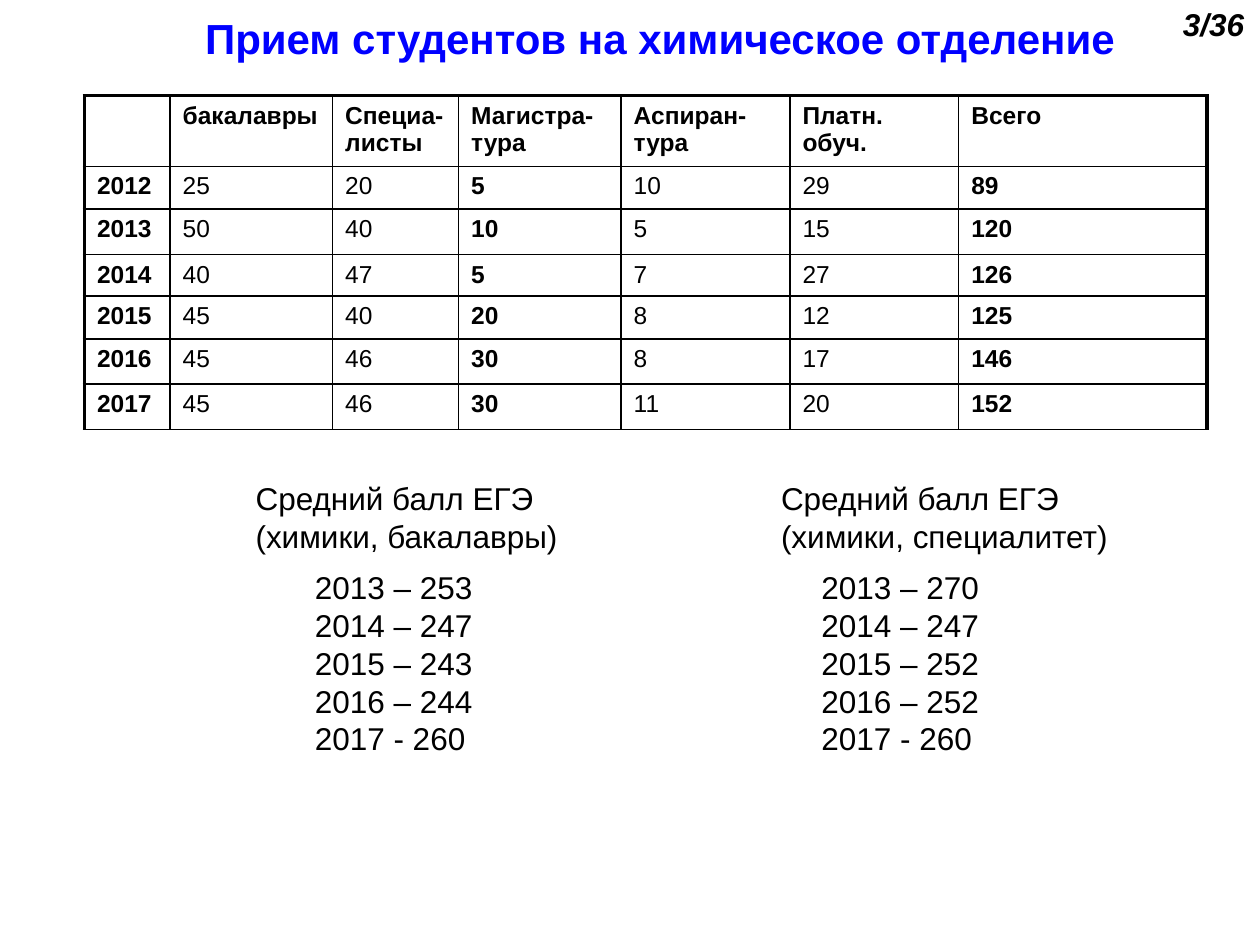
from typing import NamedTuple

from lxml.etree import SubElement
from pptx import Presentation
from pptx.dml.color import RGBColor
from pptx.enum.text import MSO_AUTO_SIZE as AutoSize
from pptx.oxml.ns import qn
from pptx.slide import Slide
from pptx.table import _Cell as Cell
from pptx.text.text import TextFrame
from pptx.util import Inches, Pt

BLACK = RGBColor(0x00, 0x00, 0x00)
BLUE = RGBColor(0x00, 0x00, 0xFF)
FONT = "Arial"
THIN, THICK = 1, 2.25

COLUMN_WIDTHS = (0.68, 1.29, 1, 1.29, 1.34, 1.34, 1.97)
ROW_HEIGHTS = (0.56, 0.34, 0.36, 0.33, 0.34, 0.36, 0.36)
BOLD_COLUMNS = (0, 3, 6)
ADMISSIONS = (
    ("", "бакалавры", "Специа-листы", "Магистра-тура", "Аспиран-тура", "Платн. обуч.", "Всего"),
    (2012, 25, 20, 5, 10, 29, 89),
    (2013, 50, 40, 10, 5, 15, 120),
    (2014, 40, 47, 5, 7, 27, 126),
    (2015, 45, 40, 20, 8, 12, 125),
    (2016, 45, 46, 30, 8, 17, 146),
    (2017, 45, 46, 30, 11, 20, 152),
)


class Label(NamedTuple):
    text: str
    left: float
    top: float
    width: float
    height: float
    size: float = 18
    color: RGBColor = BLACK
    bold: bool = False
    italic: bool = False


LABELS = (
    Label("Прием студентов на химическое отделение", 1.53, 0.05, 7.46, 0.5, 24, BLUE, True),
    Label("3/36", 9.29, -0.01, 0.69, 0.4, bold=True, italic=True),
    Label("Средний балл ЕГЭ\n(химики, бакалавры)", 1.93, 3.75, 2.62, 0.71),
    Label("2013 – 253\n2014 – 247\n2015 – 243\n2016 – 244\n2017 - 260", 2.4, 4.46, 1.46, 1.62),
    Label("Средний балл ЕГЭ\n(химики, специалитет)", 6.1, 3.75, 2.82, 0.71),
    Label("2013 – 270\n2014 – 247\n2015 – 252\n2016 – 252\n2017 - 260", 6.42, 4.46, 1.46, 1.62),
)


def format_text(text_frame: TextFrame, size: float, color: RGBColor,
                bold: bool, italic: bool = False) -> None:
    for paragraph in text_frame.paragraphs:
        for run in paragraph.runs:
            font = run.font
            font.name, font.size = FONT, Pt(size)
            font.bold, font.italic = bold, italic
            font.color.rgb = color


def add_label(slide: Slide, label: Label) -> None:
    box = slide.shapes.add_textbox(Inches(label.left), Inches(label.top),
                                   Inches(label.width), Inches(label.height))
    text_frame = box.text_frame
    text_frame.text = label.text
    text_frame.word_wrap = False
    text_frame.auto_size = AutoSize.SHAPE_TO_FIT_TEXT
    format_text(text_frame, label.size, label.color, label.bold, label.italic)


def set_borders(cell: Cell, left: float, right: float, top: float, bottom: float) -> None:
    """Draw the four cell borders, with widths in points."""
    properties = cell._tc.get_or_add_tcPr()
    for side, width in (("L", left), ("R", right), ("T", top), ("B", bottom)):
        line = SubElement(properties, qn(f"a:ln{side}"), w=str(Pt(width)))
        fill = SubElement(line, qn("a:solidFill"))
        SubElement(fill, qn("a:srgbClr"), val=str(BLACK))


def add_admissions_table(slide: Slide) -> None:
    frame = slide.shapes.add_table(
        len(ROW_HEIGHTS), len(COLUMN_WIDTHS), Inches(0.67), Inches(0.76),
        Inches(sum(COLUMN_WIDTHS)), Inches(sum(ROW_HEIGHTS)))
    table = frame.table
    table.first_row = table.horz_banding = False
    for column, width in zip(table.columns, COLUMN_WIDTHS):
        column.width = Inches(width)
    for row, height in zip(table.rows, ROW_HEIGHTS):
        row.height = Inches(height)

    last_column = len(COLUMN_WIDTHS) - 1
    for row_index, values in enumerate(ADMISSIONS):
        for column_index, value in enumerate(values):
            cell = table.cell(row_index, column_index)
            cell.text_frame.text = str(value)
            format_text(cell.text_frame, 14, BLACK,
                        row_index == 0 or column_index in BOLD_COLUMNS)
            set_borders(cell,
                        left=THICK if column_index == 0 else THIN,
                        right=THICK if column_index == last_column else THIN,
                        top=THICK if row_index == 0 else THIN,
                        bottom=THIN)
            cell.fill.background()


def main() -> None:
    presentation = Presentation()
    presentation.slide_width, presentation.slide_height = Inches(10), Inches(7.5)
    slide = presentation.slides.add_slide(presentation.slide_layouts[6])
    add_admissions_table(slide)
    for label in LABELS:
        add_label(slide, label)
    presentation.save("out.pptx")


if __name__ == "__main__":
    main()
